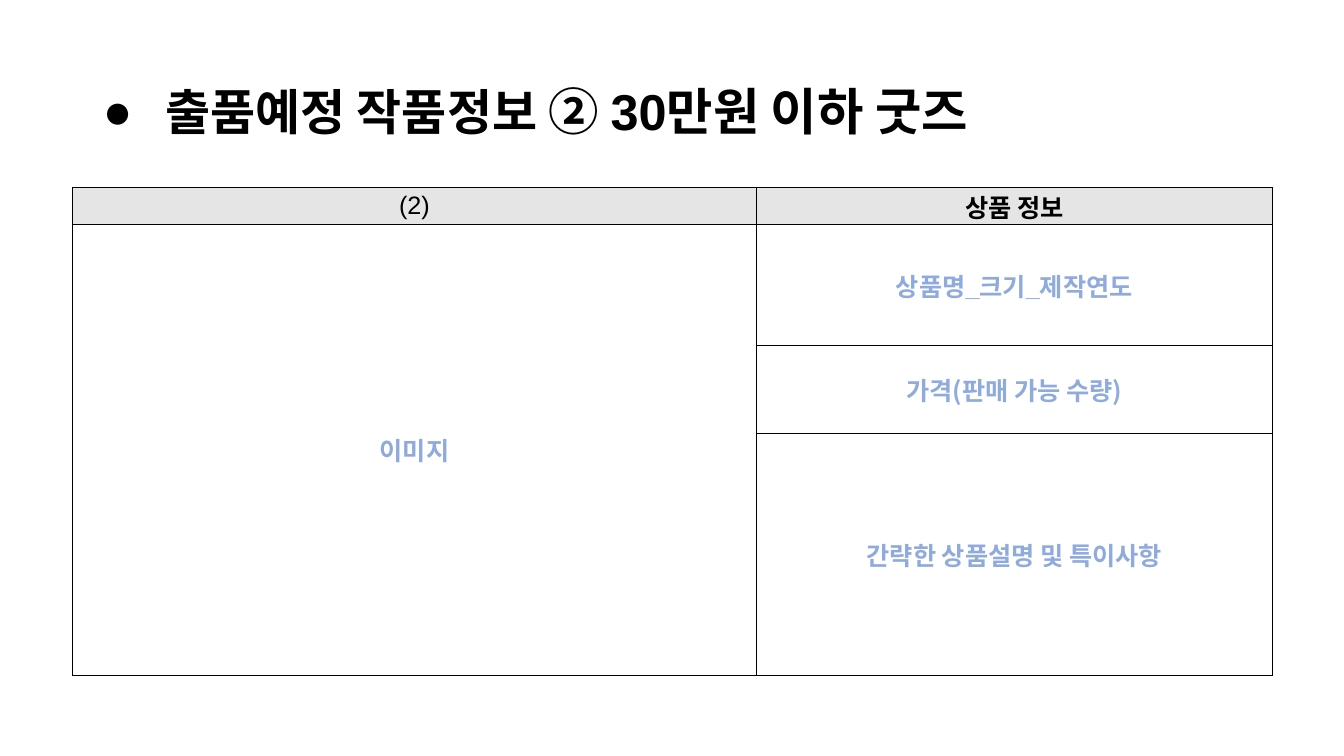
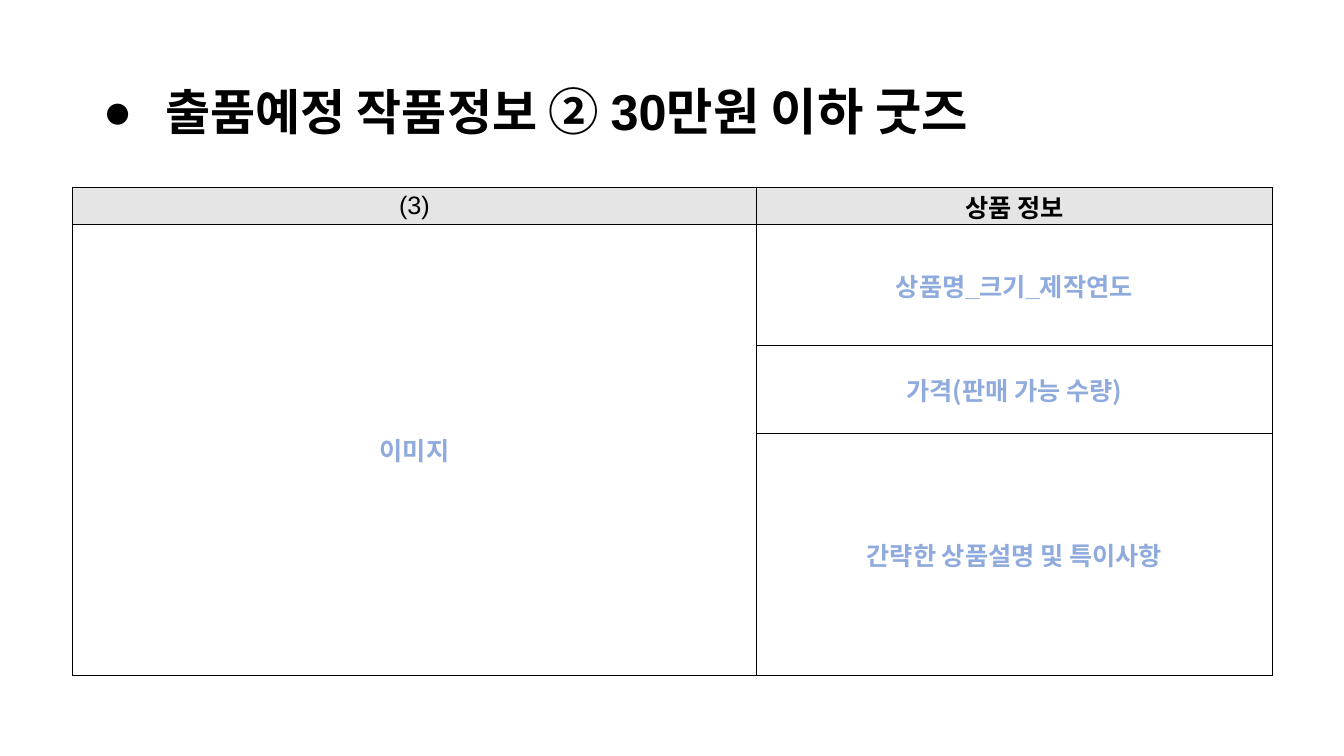
from dataclasses import dataclass

from lxml.etree import SubElement
from pptx import Presentation
from pptx.dml.color import RGBColor
from pptx.enum.text import MSO_ANCHOR, MSO_AUTO_SIZE, PP_ALIGN
from pptx.oxml import parse_xml
from pptx.oxml.ns import nsdecls, qn
from pptx.util import Inches, Pt


@dataclass(frozen=True)
class Theme:
    """Colours, fonts and type sizes of the deck."""
    ink: str = "000000"
    hint: str = "8FAADC"
    head: str = "E5E5E5"
    page: str = "FFFFFF"
    latin: str = "Arial"
    hangul: str = "Noto Sans CJK KR"
    lead: int = 35
    title: int = 36
    body: int = 18
    rule: int = 1


THEME = Theme()
WIDE, HIGH = Inches(13.33), Inches(7.5)
TITLE_BOX = (6.9, 5.47, 86.27, 19.33)
TABLE_BOX = (5.4, 24.8, 89.27, 64.53)
COLS = (57, 43)
ROWS = (37, 120, 87, 240)
TITLE = (("출품예정 작품정보 ", THEME.lead, THEME.hangul),
         ("② 30만원 이하 굿즈", THEME.title, THEME.latin))
FIELDS = (("상품명_크기_제작연도", THEME.latin),
          ("가격(판매 가능 수량)", THEME.hangul),
          ("간략한 상품설명 및 특이사항", THEME.hangul))


def place(box):
    """Turn percentages of the slide into lengths."""
    return [round(part * side / 100) for part, side in zip(box, (WIDE, HIGH) * 2)]


def style(run, size, face, tint, bold):
    """Format one run, with a Hangul face for East Asian text."""
    font = run.font
    font.size, font.name, font.bold = Pt(size), face, bold
    font.color.rgb = RGBColor.from_string(tint)
    SubElement(run._r.get_or_add_rPr(), qn("a:ea"), typeface=THEME.hangul)


def add_title(slide, box):
    """Fill the title placeholder with a bulleted heading."""
    shape = slide.shapes.title
    shape.left, shape.top, shape.width, shape.height = place(box)
    frame = shape.text_frame
    frame.word_wrap, frame.auto_size = True, MSO_AUTO_SIZE.NONE
    frame.vertical_anchor = MSO_ANCHOR.MIDDLE
    para = frame.paragraphs[0]
    para.alignment, para.line_spacing = PP_ALIGN.LEFT, 0.9
    props = para._p.get_or_add_pPr()
    props.set("marL", str(Inches(0.62)))
    props.set("indent", str(-Inches(0.62)))
    SubElement(props, qn("a:buFont"), typeface=THEME.latin)
    SubElement(props, qn("a:buChar"), char="●")
    for text, size, face in TITLE:
        run = para.add_run()
        run.text = text
        style(run, size, face, THEME.ink, True)


def frame_cell(cell, fill):
    """Give a cell its fill, margins and four rules."""
    cell.fill.solid()
    cell.fill.fore_color.rgb = RGBColor.from_string(fill)
    cell.vertical_anchor = MSO_ANCHOR.MIDDLE
    cell.margin_left = cell.margin_right = Inches(0.03)
    cell.margin_top = cell.margin_bottom = 0
    props = cell._tc.get_or_add_tcPr()
    for index, side in enumerate("LRTB"):
        props.insert(index, parse_xml(
            f'<a:ln{side} {nsdecls("a")} w="{Pt(THEME.rule)}"><a:solidFill>'
            f'<a:srgbClr val="{THEME.ink}"/></a:solidFill></a:ln{side}>'))


def write(cell, text, face, tint, bold=True):
    """Write one centred line in a cell."""
    para = cell.text_frame.paragraphs[0]
    para.text = text
    para.alignment = PP_ALIGN.CENTER
    style(para.runs[0], THEME.body, face, tint, bold)


def add_form(slide, box, label):
    """Draw the product form: image on the left, details on the right."""
    left, top, width, height = place(box)
    table = slide.shapes.add_table(len(ROWS), len(COLS), left, top, width, height).table
    for col, share in zip(table.columns, COLS):
        col.width = round(width * share / sum(COLS))
    for row, share in zip(table.rows, ROWS):
        row.height = round(height * share / sum(ROWS))
    for index, row in enumerate(table.rows):
        for cell in row.cells:
            frame_cell(cell, THEME.page if index else THEME.head)
    table.cell(1, 0).merge(table.cell(len(ROWS) - 1, 0))
    write(table.cell(0, 0), label, THEME.latin, THEME.ink, False)
    write(table.cell(0, 1), "상품 정보", THEME.latin, THEME.ink)
    write(table.cell(1, 0), "이미지", THEME.latin, THEME.hint)
    for index, (text, face) in enumerate(FIELDS, 1):
        write(table.cell(index, 1), text, face, THEME.hint)


def main():
    """Build one form slide for each numbered product."""
    deck = Presentation()
    deck.slide_width, deck.slide_height = WIDE, HIGH
    for label in ("(2)", "(3)"):
        slide = deck.slides.add_slide(deck.slide_layouts[5])
        add_title(slide, TITLE_BOX)
        add_form(slide, TABLE_BOX, label)
    deck.save("out.pptx")


if __name__ == "__main__":
    main()
